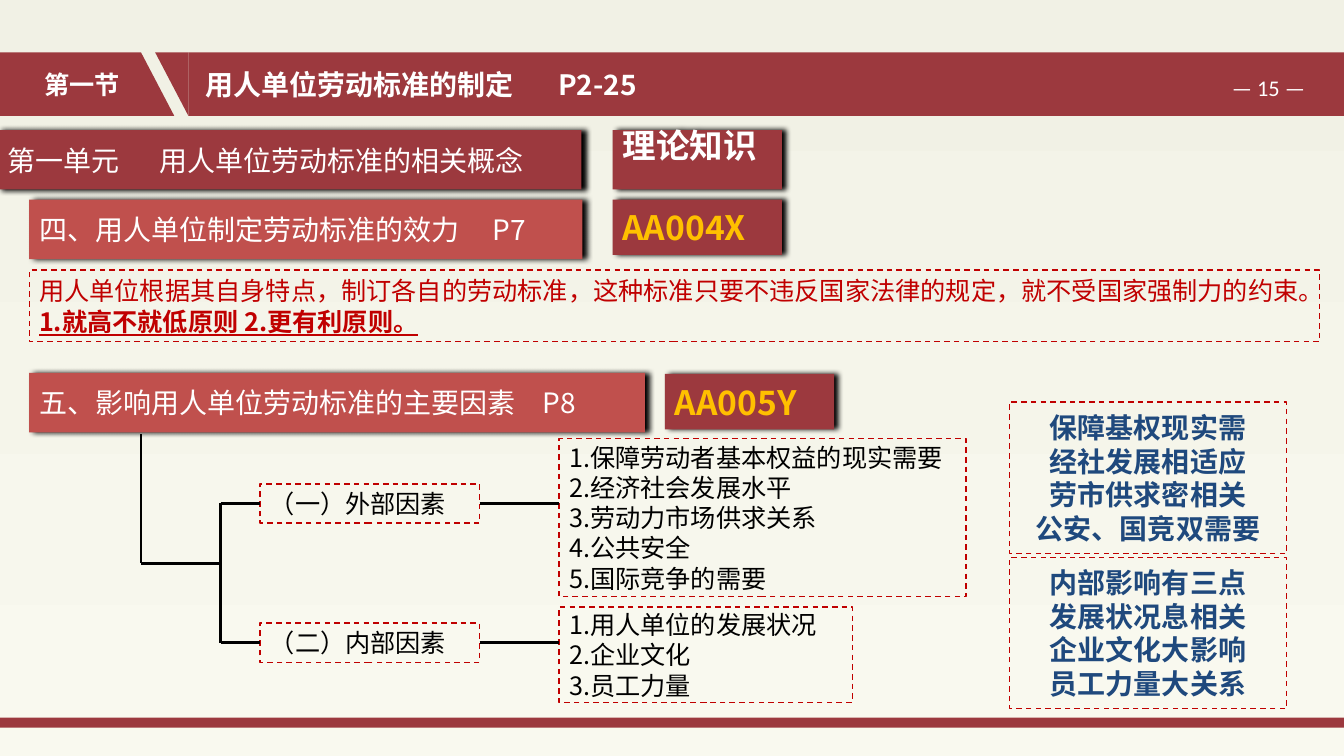
from lxml import etree
from pptx import Presentation
from pptx.dml.color import RGBColor
from pptx.enum import dml, shapes, text
from pptx.oxml.ns import qn
from pptx.util import Inches, Pt

FONT = "Noto Sans CJK SC"
RED, CORAL, DASH = "9C393E", "C0504D", "C00000"
WHITE, BLACK, GOLD, NAVY = "FFFFFF", "000000", "FFC000", "1F497D"
LEFT, CENTER = text.PP_ALIGN.LEFT, text.PP_ALIGN.CENTER


def rgb(value):
    return RGBColor.from_string(value)


def place(sp, box):
    sp.left, sp.top, sp.width, sp.height = map(Inches, box)


def paint(sp, fill=None, dashed=False):
    if fill:
        sp.fill.solid()
        sp.fill.fore_color.rgb = rgb(fill)
    else:
        sp.fill.background()
    if dashed:
        sp.line.color.rgb = rgb(DASH)
        sp.line.width = Pt(1)
        sp.line.dash_style = dml.MSO_LINE.DASH
    else:
        sp.line.fill.background()


def add_rect(s, box, fill=None, dashed=False, kind=shapes.MSO_SHAPE.RECTANGLE):
    sp = s.shapes.add_shape(kind, *map(Inches, box))
    sp.shadow.inherit = False
    paint(sp, fill, dashed)
    return sp


def add_shadow(sp):
    effects = sp._element.spPr.find(qn("a:effectLst"))
    shadow = etree.SubElement(effects, qn("a:outerShdw"), blurRad=str(Pt(4)),
                              dist=str(Pt(3)), dir="0", algn="l", rotWithShape="0")
    color = etree.SubElement(shadow, qn("a:srgbClr"), val=BLACK)
    etree.SubElement(color, qn("a:alpha"), val="100000")


def write(sp, lines, size, color, bold=False, align=LEFT, font=FONT, tab=None):
    tf = sp.text_frame
    tf.word_wrap = True
    tf.auto_size = text.MSO_AUTO_SIZE.NONE
    tf.vertical_anchor = text.MSO_ANCHOR.MIDDLE
    tf.text = "\n".join(lines)
    for p in tf.paragraphs:
        p.alignment = align
        p.space_before = Pt(0)
        p.font.size = Pt(size)
        p.font.bold = bold
        p.font.name = font
        p.font.color.rgb = rgb(color)
        pPr = p._p.get_or_add_pPr()
        pPr.set("marL", "0")
        pPr.set("indent", "0")
        defaults = pPr.find(qn("a:defRPr"))
        etree.SubElement(defaults, qn("a:ea"), typeface=font)
        defaults.addprevious(etree.Element(qn("a:buNone")))
        if tab:
            tabs = etree.Element(qn("a:tabLst"))
            etree.SubElement(tabs, qn("a:tab"), pos=str(Inches(tab)), algn="l")
            defaults.addprevious(tabs)
    return tf


def add_line(s, x1, y1, x2, y2):
    line = s.shapes.add_connector(shapes.MSO_CONNECTOR.STRAIGHT,
                                  *map(Inches, (x1, y1, x2, y2)))
    line.line.color.rgb = rgb(BLACK)
    line.line.width = Pt(2)
    etree.SubElement(line._element.spPr, qn("a:effectLst"))


def add_banner(s, box, label, fill, tab):
    sp = add_rect(s, box, fill)
    add_shadow(sp)
    write(sp, [label], 20, WHITE, tab=tab)


def add_badge(s, box, label, color):
    sp = add_rect(s, box, RED)
    add_shadow(sp)
    return write(sp, [label], 24, color, bold=True)


def add_header(s, box):
    x, y, w, h = box
    tab_w, slant, title_x = 1.4, 0.33, 1.87
    section = add_rect(s, (x, y, tab_w, h), RED)
    tf = write(section, ["第一节"], 18, WHITE, bold=True, align=CENTER)
    tf.margin_left, tf.margin_right = Inches(0.23), 0
    triangle = shapes.MSO_SHAPE.RIGHT_TRIANGLE
    add_rect(s, (x + tab_w, y, slant, h), RED, kind=triangle)
    turned = add_rect(s, (x + title_x - slant, y, slant, h), RED, kind=triangle)
    turned.rotation = 180

    title = s.shapes.title
    place(title, (x + title_x, y, w - title_x, h))
    paint(title, RED)
    tf = write(title, ["用人单位劳动标准的制定\tP2-25"], 20, WHITE, bold=True, tab=3.64)
    tf.margin_left = Inches(0.17)

    number = s.shapes.add_textbox(*map(Inches, (x + w - 1.21, y + 0.16, 1.07, 0.37)))
    write(number, ["— 15 —"], 16, WHITE, font="Calibri")


def add_concepts(s, box):
    x, y, w, h = box
    bar_h, badge_x = 0.59, 6.08
    add_banner(s, (-0.02, y, 5.79, bar_h), "第一单元\t用人单位劳动标准的相关概念", RED, 1.29)
    tf = add_badge(s, (badge_x, y, 1.68, bar_h), "理论知识", WHITE)
    tf.margin_top, tf.margin_bottom = 0, Inches(0.3)

    add_banner(s, (x, y + 0.69, 5.49, bar_h), "四、用人单位制定劳动标准的效力\tP7", CORAL, 4.55)
    add_badge(s, (badge_x, y + 0.69, 1.68, 0.55), "AA004X", GOLD)

    rule = add_rect(s, (x, y + 1.39, w, h - 1.39), dashed=True)
    tf = write(rule, ["用人单位根据其自身特点，制订各自的劳动标准，这种标准只要不违反国家法律的规定，就不受国家强制力的约束。",
                      "1.就高不就低原则 2.更有利原则。"], 18, DASH)
    tf.paragraphs[1].font.bold = True
    tf.paragraphs[1].font.underline = True


def add_factors(s, box, branches):
    x, y, w, h = box
    trunk_x, fork_x, label_x = x + 1.11, x + 1.9, x + 2.29
    label_w, label_h, list_x = 2.18, 0.39, x + 5.26
    add_banner(s, (x, y, 6.11, 0.59), "五、影响用人单位劳动标准的主要因素\tP8", CORAL, 5.11)
    add_badge(s, (x + 6.31, y + 0.01, 1.68, 0.55), "AA005Y", GOLD)

    middles = []
    bodies = [ph for ph in s.placeholders if ph.placeholder_format.idx > 0]
    for body, (label, label_y, list_y, list_w, list_h, items) in zip(bodies, branches):
        sp = add_rect(s, (label_x, y + label_y, label_w, label_h), dashed=True)
        write(sp, [label], 18, BLACK)
        place(body, (list_x, y + list_y, list_w, list_h))
        paint(body, dashed=True)
        write(body, [f"{n}.{item}" for n, item in enumerate(items, 1)], 18, BLACK)
        middle = y + label_y + label_h / 2
        middles.append(middle)
        add_line(s, fork_x, middle, label_x, middle)
        add_line(s, label_x + label_w, middle, list_x, middle)

    fork_y = y + 1.89
    add_line(s, trunk_x, y + 0.61, trunk_x, fork_y)
    add_line(s, trunk_x, fork_y, fork_x, fork_y)
    add_line(s, fork_x, middles[0], fork_x, middles[1])


def add_rhymes(s, box, rhymes):
    x, y, w, h = box
    card_h = 1.5
    step = (h - card_h) / (len(rhymes) - 1)
    for i, lines in enumerate(rhymes):
        sp = add_rect(s, (x, y + i * step, w, card_h), dashed=True)
        write(sp, lines, 20, NAVY, bold=True, align=CENTER)


def main():
    prs = Presentation()
    prs.slide_width, prs.slide_height = Inches(13.34), Inches(7.5)
    s = prs.slides.add_slide(prs.slide_layouts[3])
    fill = s.background.fill
    fill.gradient()
    fill.gradient_angle = 270
    for stop, color in zip(fill.gradient_stops, ("F1F1E5", "F9F9EF")):
        stop.color.rgb = rgb(color)

    add_rect(s, (0, 7.12, 13.34, 0.1), RED)
    add_header(s, (0, 0.52, 13.34, 0.63))
    add_concepts(s, (0.29, 1.29, 12.81, 2.1))
    add_factors(s, (0.29, 3.7, 9.3, 3.27), [
        ("（一）外部因素", 1.1, 0.65, 4.04, 1.57,
         ["保障劳动者基本权益的现实需要", "经济社会发展水平", "劳动力市场供求关系", "公共安全", "国际竞争的需要"]),
        ("（二）内部因素", 2.48, 2.32, 2.91, 0.95,
         ["用人单位的发展状况", "企业文化", "员工力量"]),
    ])
    add_rhymes(s, (10.02, 3.99, 2.75, 3.04), [
        ["保障基权现实需", "经社发展相适应", "劳市供求密相关", "公安、国竞双需要"],
        ["内部影响有三点", "发展状况息相关", "企业文化大影响", "员工力量大关系"],
    ])
    prs.save("out.pptx")


if __name__ == "__main__":
    main()
